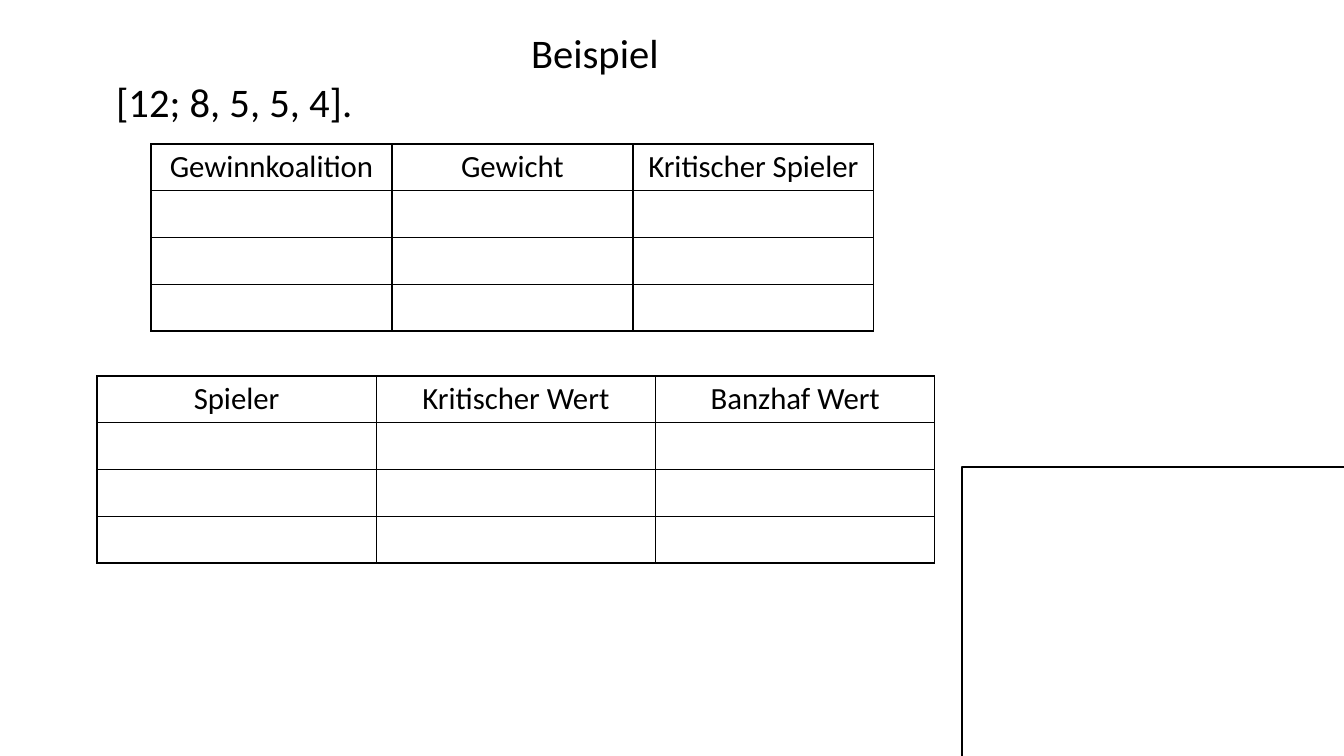
from lxml import etree
from pptx import Presentation
from pptx import util as u
from pptx.dml.color import RGBColor
from pptx.enum import shapes, text
from pptx.oxml.ns import qn

EMU_PER_PX = 914400 / 100.8
COLORS = {"ink": "000000"}


def px(*lengths):
    return [u.Emu(round(length * EMU_PER_PX)) for length in lengths]


class SlideBuilder:
    font = "Calibri"
    heading_size = u.Pt(29)
    table_size = u.Pt(22)
    line_width = u.Pt(1)

    def __init__(self, slide):
        self.slide = slide
        self.ink = RGBColor.from_string(COLORS["ink"])

    def add_wording(self, frame, wording, size, align):
        paragraph = frame.paragraphs[0]
        paragraph.alignment = align
        paragraph.space_before = u.Pt(0)
        run = paragraph.add_run()
        run.text = wording
        run.font.name = self.font
        run.font.size = size
        run.font.color.rgb = self.ink
        return paragraph

    def placeholder(self, index, wording, box, align, anchor):
        holder = self.slide.placeholders[index]
        holder.left, holder.top, holder.width, holder.height = px(*box)
        frame = holder.text_frame
        frame.word_wrap = True
        frame.auto_size = text.MSO_AUTO_SIZE.NONE
        frame.vertical_anchor = anchor
        return self.add_wording(frame, wording, self.heading_size, align)

    def title(self, wording, *box):
        self.placeholder(0, wording, box, text.PP_ALIGN.CENTER, text.MSO_ANCHOR.MIDDLE)

    def body(self, wording, *box):
        line = self.placeholder(1, wording, box, text.PP_ALIGN.LEFT, text.MSO_ANCHOR.TOP)
        properties = line._p.get_or_add_pPr()
        properties.set("marL", "0")
        properties.set("indent", "0")
        etree.SubElement(properties, qn("a:buNone"))

    def border(self, cell):
        """Rule all four sides; call before setting the fill, which must follow them."""
        properties = cell._tc.get_or_add_tcPr()
        for side in ("a:lnL", "a:lnR", "a:lnT", "a:lnB"):
            line = etree.SubElement(properties, qn(side), w=str(self.line_width))
            fill = etree.SubElement(line, qn("a:solidFill"))
            etree.SubElement(fill, qn("a:srgbClr"), val=COLORS["ink"])

    def table(self, headers, empty_rows, *box):
        grid = self.slide.shapes.add_table(empty_rows + 1, len(headers), *px(*box)).table
        grid.first_row = grid.horz_banding = False
        for cell in grid.iter_cells():
            self.border(cell)
            cell.fill.background()
            cell.margin_top = cell.margin_bottom = px(4)[0]
        for column, header in enumerate(headers):
            self.add_wording(grid.cell(0, column).text_frame, header,
                             self.table_size, text.PP_ALIGN.CENTER)

    def frame(self, *box):
        outline = self.slide.shapes.add_shape(shapes.MSO_SHAPE.RECTANGLE, *px(*box))
        outline.shadow.inherit = False
        outline.fill.background()
        outline.line.color.rgb = self.ink
        outline.line.width = self.line_width


def main():
    deck = Presentation()
    deck.slide_width, deck.slide_height = px(1344, 756)
    example = SlideBuilder(deck.slides.add_slide(deck.slide_layouts[1]))
    example.title("Beispiel", 176, 11, 838, 82)
    example.body("[12; 8, 5, 5, 4].", 106, 72, 745, 72)
    example.table(["Gewinnkoalition", "Gewicht", "Kritischer Spieler"], 3,
                  151, 144, 723, 187)
    example.table(["Spieler", "Kritischer Wert", "Banzhaf Wert"], 3,
                  97, 376, 838, 187)
    example.frame(962, 467, 386, 290)
    deck.save("out.pptx")


if __name__ == "__main__":
    main()
